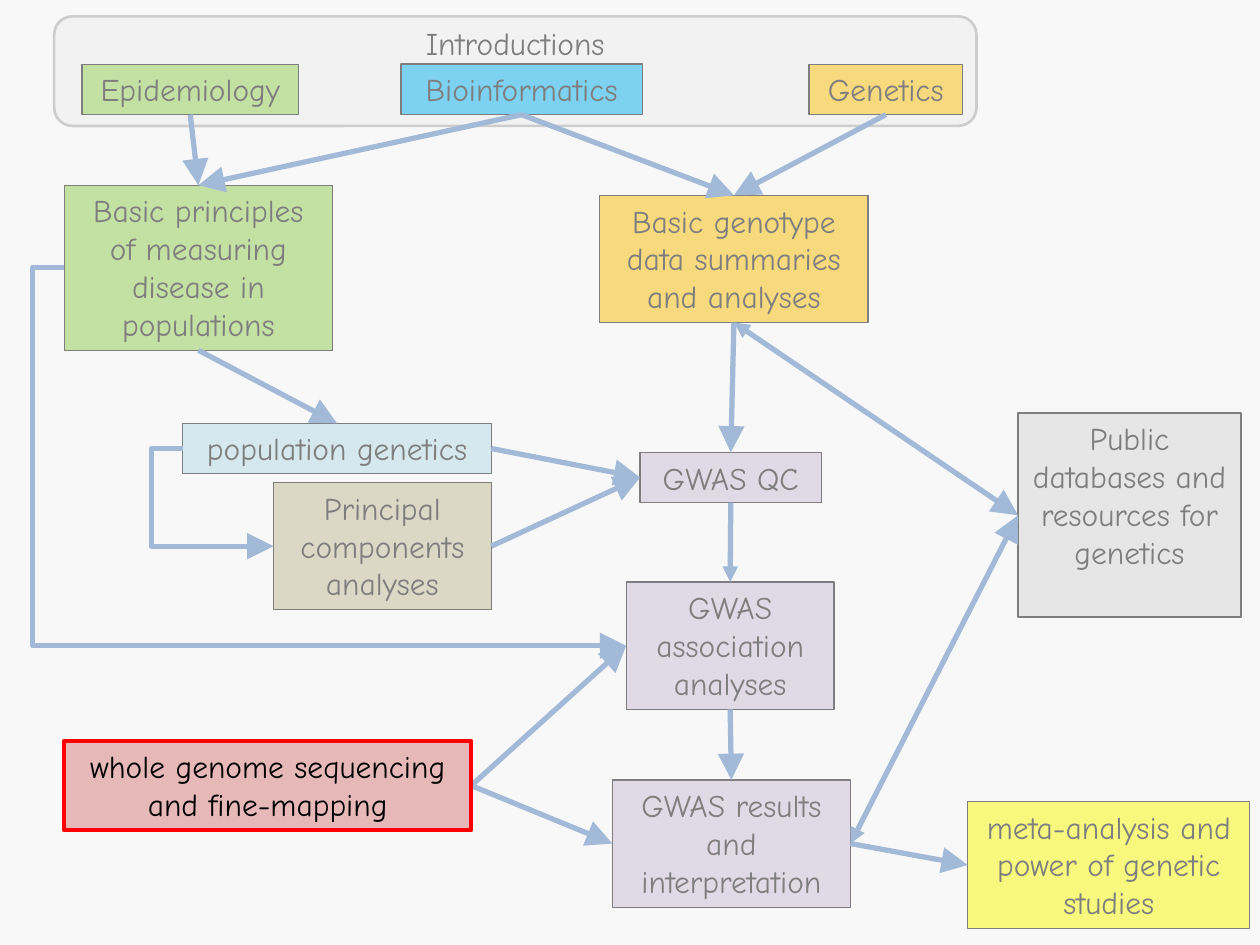
from dataclasses import dataclass

from lxml import etree
from pptx import Presentation
from pptx import util as u
from pptx.dml.color import RGBColor
from pptx.enum import shapes, text
from pptx.oxml.ns import qn

COLOURS = {
    "panel": "F2F2F2", "panel_line": "A6A6A6", "ink": "000000", "link": "4B7EBC",
    "green": "92D050", "blue": "00B0F0", "amber": "FFC000", "pale_blue": "B7DEE8",
    "tan": "C4BD97", "lilac": "CCC1DA", "grey": "D9D9D9", "yellow": "FFFF00",
    "rose": "E6B9B8", "red": "FF0000",
}
FONT = {"name": "Comic Neue", "size": u.Pt(18)}
TOP, LEFT, BOTTOM, RIGHT = range(4)


@dataclass
class Topic:
    name: str
    label: str
    left: float
    top: float
    width: float
    height: float
    fill: str
    wrap: bool = True
    line: str = "ink"
    weight: float = 0.75


@dataclass
class Link:
    start: str
    start_side: int
    end: str
    end_side: int
    head: str = ""
    tail: str = "lg"
    bend: float = 0


TOPICS = [
    Topic("epidemiology", "Epidemiology", 0.65, 0.51, 1.72, 0.4, "green", False),
    Topic("bioinformatics", "Bioinformatics", 3.18, 0.51, 1.92, 0.4, "blue", False, weight=1),
    Topic("genetics", "Genetics", 6.42, 0.51, 1.22, 0.4, "amber", False),
    Topic("disease", "Basic principles of measuring disease in populations",
          0.51, 1.47, 2.13, 1.31, "green"),
    Topic("genotype", "Basic genotype data summaries and analyses",
          4.76, 1.55, 2.13, 1.01, "amber"),
    Topic("population", "population genetics", 1.45, 3.36, 2.45, 0.4, "pale_blue", False),
    Topic("components", "Principal components analyses", 2.17, 3.83, 1.73, 1.01, "tan"),
    Topic("qc", "GWAS QC", 5.08, 3.59, 1.44, 0.4, "lilac", False),
    Topic("association", "GWAS association analyses", 4.97, 4.62, 1.65, 1.01, "lilac"),
    Topic("results", "GWAS results and interpretation", 4.86, 6.19, 1.89, 1.01, "lilac"),
    Topic("databases", "Public databases and resources for genetics",
          8.08, 3.28, 1.77, 1.62, "grey", weight=1),
    Topic("meta", "meta-analysis and power of genetic studies",
          7.68, 6.36, 2.24, 1.01, "yellow"),
    Topic("sequencing", "whole genome sequencing and fine-mapping",
          0.51, 5.88, 3.23, 0.71, "rose", line="red", weight=2.25),
]

LINKS = [
    Link("epidemiology", BOTTOM, "disease", TOP),
    Link("bioinformatics", BOTTOM, "disease", TOP),
    Link("bioinformatics", BOTTOM, "genotype", TOP),
    Link("genetics", BOTTOM, "genotype", TOP),
    Link("disease", BOTTOM, "population", TOP),
    Link("genotype", BOTTOM, "qc", TOP),
    Link("qc", BOTTOM, "association", TOP, tail="med"),
    Link("association", BOTTOM, "results", TOP),
    Link("population", RIGHT, "qc", LEFT),
    Link("components", RIGHT, "qc", LEFT),
    Link("results", RIGHT, "meta", LEFT),
    Link("results", RIGHT, "databases", LEFT, head="med"),
    Link("genotype", BOTTOM, "databases", LEFT, head="med"),
    Link("sequencing", RIGHT, "association", LEFT),
    Link("sequencing", RIGHT, "results", LEFT),
    Link("population", LEFT, "components", LEFT, bend=0.25),
    Link("disease", LEFT, "association", LEFT, bend=0.25),
]


def colour(name: str) -> RGBColor:
    return RGBColor.from_string(COLOURS[name])


def apply(target, values: dict) -> None:
    for key, value in values.items():
        setattr(target, key, value)


def add_block(page, preset, left: float, top: float, width: float, height: float, fill: str):
    box = page.shapes.add_shape(preset, *map(u.Inches, (left, top, width, height)))
    box.shadow.inherit = False
    box.fill.solid()
    box.fill.fore_color.rgb = colour(fill)
    return box


def outline(line, name: str, weight: float) -> None:
    line.color.rgb = colour(name)
    line.width = u.Pt(weight)


def write(box, label: str, **frame_values) -> None:
    apply(box.text_frame, {"vertical_anchor": text.MSO_ANCHOR.TOP, **frame_values})
    para = box.text_frame.paragraphs[0]
    para.alignment = text.PP_ALIGN.CENTER
    span = para.add_run()
    span.text = label
    apply(span.font, FONT)
    span.font.color.rgb = colour("ink")


def add_topic(page, topic: Topic):
    box = add_block(page, shapes.MSO_SHAPE.RECTANGLE, topic.left, topic.top,
                    topic.width, topic.height, topic.fill)
    outline(box.line, topic.line, topic.weight)
    write(box, topic.label, word_wrap=topic.wrap,
          auto_size=text.MSO_AUTO_SIZE.SHAPE_TO_FIT_TEXT)
    return box


def add_link(page, boxes: dict, link: Link) -> None:
    kind = shapes.MSO_CONNECTOR.ELBOW if link.bend else shapes.MSO_CONNECTOR.STRAIGHT
    connector = page.shapes.add_connector(kind, 0, 0, 0, 0)
    connector.begin_connect(boxes[link.start], link.start_side)
    connector.end_connect(boxes[link.end], link.end_side)
    outline(connector.line, "link", 3)
    properties = connector._element.spPr
    stroke = properties.find(qn("a:ln"))
    for tag, size in (("a:headEnd", link.head), ("a:tailEnd", link.tail)):
        if size:
            etree.SubElement(stroke, qn(tag), type="triangle", w=size, len=size)
    etree.SubElement(properties, qn("a:effectLst"))
    if link.bend:
        ratio = -u.Inches(link.bend) / connector.width
        guides = properties.find(qn("a:prstGeom")).get_or_add_avLst()
        etree.SubElement(guides, qn("a:gd"), name="adj1", fmla=f"val {round(ratio * 100000)}")


def add_veil(page, width: float, height: float) -> None:
    veil = add_block(page, shapes.MSO_SHAPE.RECTANGLE, 0, 0, width, height, "panel")
    veil.line.fill.background()
    tint = veil._element.spPr.find(qn("a:solidFill"))[0]
    etree.SubElement(tint, qn("a:alpha"), val="52000")


def main() -> None:
    deck = Presentation()
    apply(deck, {"slide_width": u.Inches(10), "slide_height": u.Inches(7.5)})
    page = deck.slides.add_slide(deck.slide_layouts[6])

    panel = add_block(page, shapes.MSO_SHAPE.ROUNDED_RECTANGLE, 0.43, 0.13, 7.32, 0.87, "panel")
    outline(panel.line, "panel_line", 1.5)
    write(panel, "Introductions", margin_top=u.Inches(0.02))

    boxes = {topic.name: add_topic(page, topic) for topic in TOPICS}
    for link in LINKS:
        add_link(page, boxes, link)
    add_veil(page, 10, 7.5)
    page.shapes._spTree.append(boxes["sequencing"]._element)
    deck.save("out.pptx")


if __name__ == "__main__":
    main()
